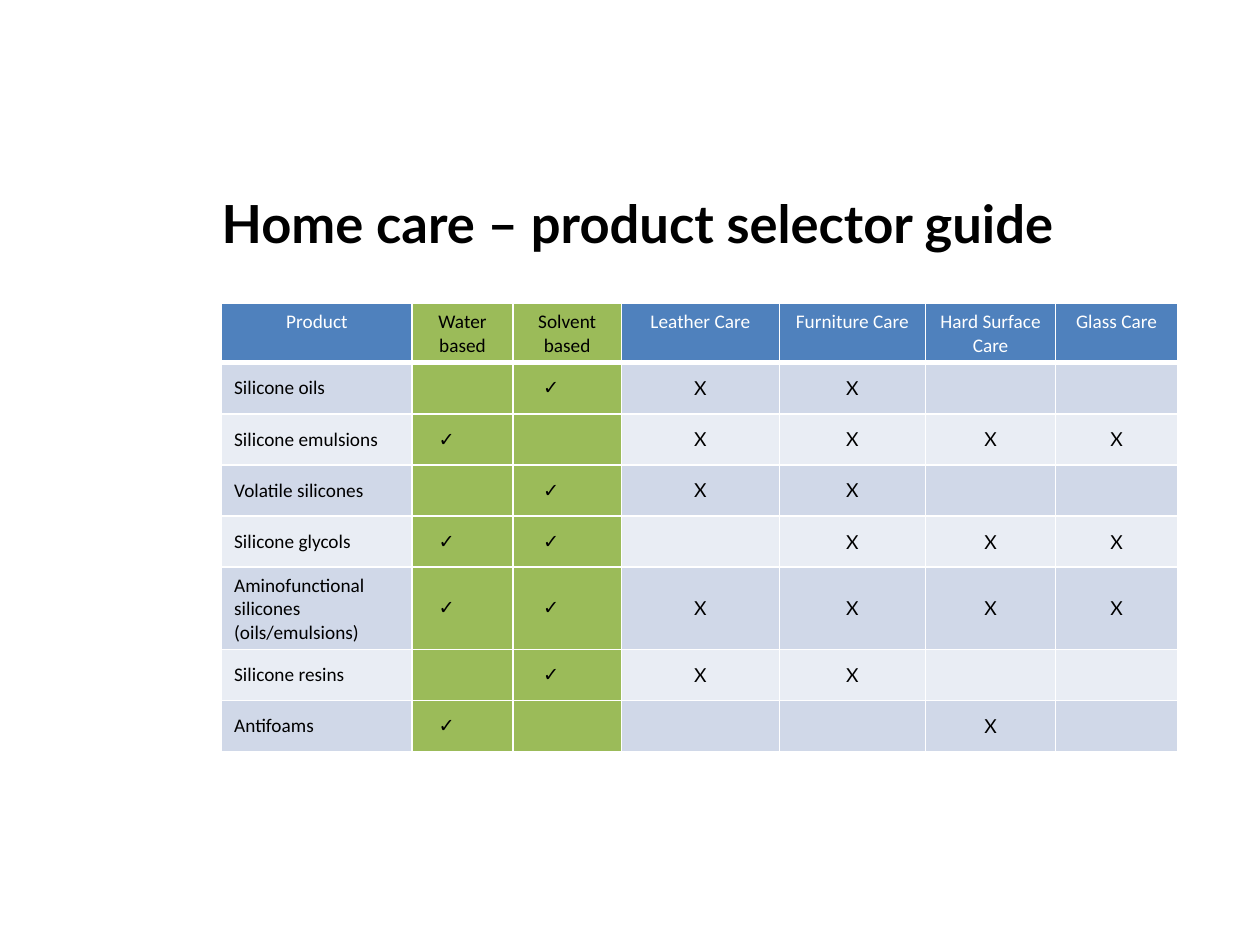
from lxml import etree
from pptx import Presentation
from pptx.dml.color import RGBColor
from pptx.enum import text
from pptx.oxml.ns import qn
from pptx.util import Cm, Pt

HEADING = "Home care – product selector guide"
COLUMNS = [
    ("Product", 3.84), ("Water based", 2.03), ("Solvent based", 2.19),
    ("Leather Care", 3.18), ("Furniture Care", 2.95),
    ("Hard Surface Care", 2.62), ("Glass Care", 2.46),
]
PRODUCTS = [
    ("Silicone oils", " ✓XX  "),
    ("Silicone emulsions", "✓ XXXX"),
    ("Volatile silicones", " ✓XX  "),
    ("Silicone glycols", "✓✓ XXX"),
    ("Aminofunctional silicones (oils/emulsions)", "✓✓XXXX"),
    ("Silicone resins", " ✓XX  "),
    ("Antifoams", "✓   X "),
]
BASE_COLUMNS = (1, 2)
BLACK, WHITE, BLUE, GREEN = "000000", "FFFFFF", "4F81BD", "9BBB59"
BANDS = ("D0D8E8", "E9EDF4")
LEFT, TOP, ROW_HEIGHT = 4.47, 6.12, 1.03
MARGINS = {"margin_left": 0.25, "margin_right": 0.25, "margin_top": 0.13, "margin_bottom": 0.13}
TICK_MARGIN = 0.89
CENTER, MIDDLE = text.PP_ALIGN.CENTER, text.MSO_ANCHOR.MIDDLE


def rgb(value):
    return RGBColor.from_string(value)


def write(paragraph, words, color, **formats):
    run = paragraph.add_run()
    run.text = words
    for key, value in formats.items():
        setattr(run.font, key, value)
    run.font.color.rgb = rgb(color)


def add_borders(cell, bottom_width):
    properties = cell._tc.get_or_add_tcPr()
    for side in "LRTB":
        width = bottom_width if side == "B" else 1
        line = etree.SubElement(properties, qn(f"a:ln{side}"), w=str(Pt(width)))
        fill = etree.SubElement(line, qn("a:solidFill"))
        etree.SubElement(fill, qn("a:srgbClr"), val=WHITE)


def fill_cell(cell, row, column, words):
    is_header, is_base = row == 0, column in BASE_COLUMNS
    add_borders(cell, 3 if is_header else 1)
    cell.fill.solid()
    band = BLUE if is_header else BANDS[(row - 1) % 2]
    cell.fill.fore_color.rgb = rgb(GREEN if is_base else band)
    for key, value in MARGINS.items():
        setattr(cell, key, Cm(value))
    if is_base or not is_header:
        cell.vertical_anchor = MIDDLE
    if not words:
        return
    if words == "✓":
        cell.margin_right = Cm(TICK_MARGIN)
    paragraph = cell.text_frame.paragraphs[0]
    if is_header or column:
        paragraph.alignment = CENTER
    write(paragraph, words, WHITE if is_header and not is_base else BLACK,
          name="Lato" if words == "X" else "Calibri", size=Pt(11), bold=False)


def main():
    deck = Presentation()
    deck.slide_width, deck.slide_height = Cm(25.4), Cm(19.05)
    slide = deck.slides.add_slide(deck.slide_layouts[6])

    heading = slide.shapes.add_textbox(Cm(LEFT), Cm(3.86), Cm(19.25), Cm(2.26)).text_frame
    heading.word_wrap = True
    for margin in MARGINS:
        setattr(heading, margin, 0)
    write(heading.paragraphs[0], HEADING, BLACK, name="Lato", size=Pt(30), bold=True)

    rows = [[label for label, width in COLUMNS]]
    rows += [[product, *marks] for product, marks in PRODUCTS]
    total_width = sum(width for label, width in COLUMNS)
    guide = slide.shapes.add_table(
        len(rows), len(COLUMNS), Cm(LEFT), Cm(TOP),
        Cm(total_width), Cm(ROW_HEIGHT * len(rows))).table
    for column, (label, width) in zip(guide.columns, COLUMNS):
        column.width = Cm(width)
    for r, entries in enumerate(rows):
        guide.rows[r].height = Cm(ROW_HEIGHT)
        for c, words in enumerate(entries):
            fill_cell(guide.cell(r, c), r, c, words.strip())

    deck.save("out.pptx")


if __name__ == "__main__":
    main()
